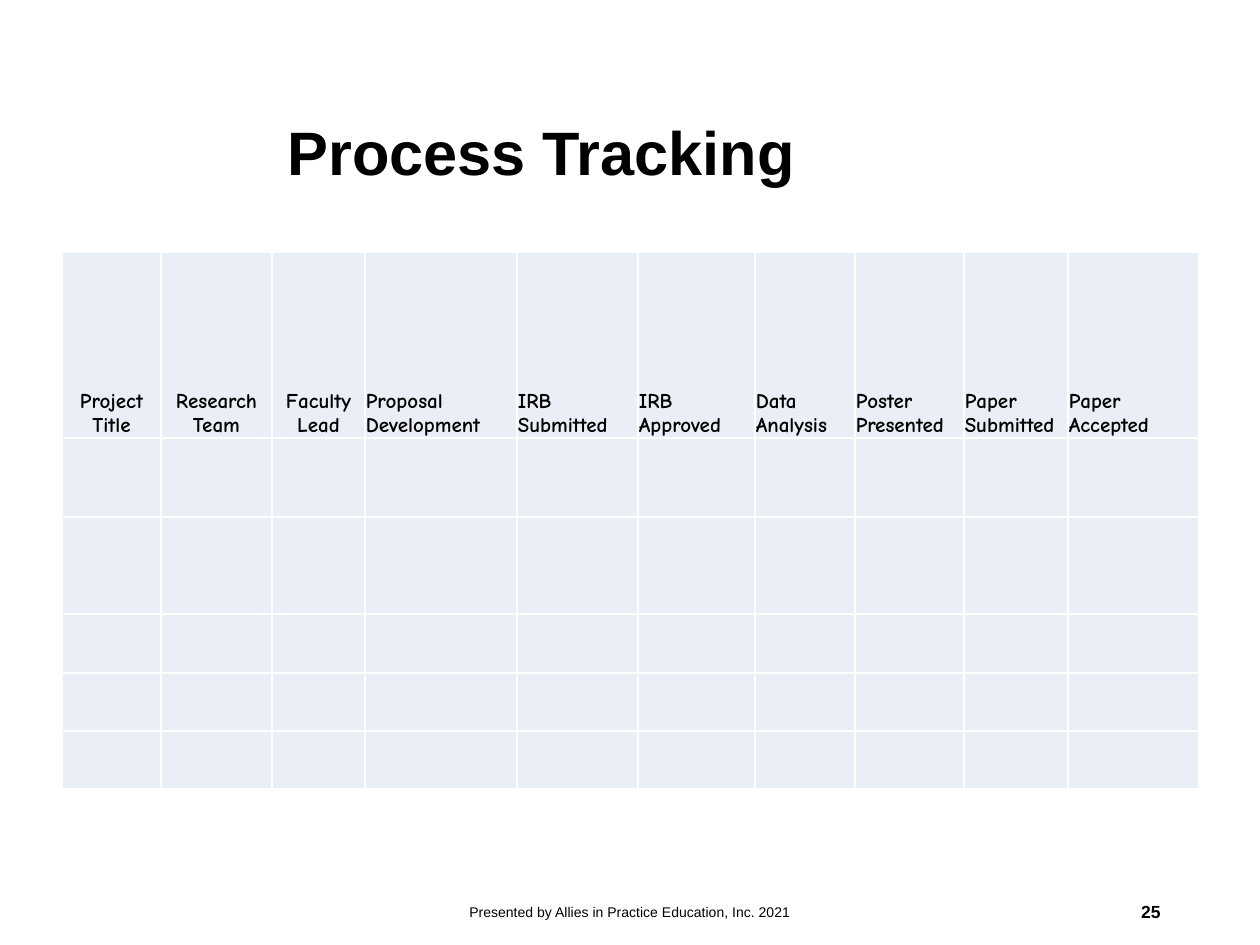
import pptx
import pptx.util
import pptx.dml.color
import pptx.enum.text
import pptx.oxml
import pptx.oxml.ns
from lxml import etree

PX = 914400 // 126
COLORS = {"text": "000000", "cell": "EAEFF7", "border": "FFFFFF"}
ALIGN = pptx.enum.text.PP_ALIGN
ANCHOR = pptx.enum.text.MSO_ANCHOR


def format_paragraph(p, font, size, bold, align):
    p.alignment = align
    p.font.name = font
    p.font.size = pptx.util.Pt(size)
    p.font.bold = bold
    p.font.color.rgb = pptx.dml.color.RGBColor.from_string(COLORS["text"])


def add_borders(cell):
    tcPr = cell._tc.get_or_add_tcPr()
    for i, side in enumerate(("lnL", "lnR", "lnT", "lnB")):
        ln = etree.Element(pptx.oxml.ns.qn("a:" + side), w="12700")
        fill = etree.SubElement(ln, pptx.oxml.ns.qn("a:solidFill"))
        etree.SubElement(fill, pptx.oxml.ns.qn("a:srgbClr"), val=COLORS["border"])
        tcPr.insert(i, ln)


prs = pptx.Presentation()
prs.slide_width = 1260 * PX
prs.slide_height = 945 * PX
s = prs.slides.add_slide(prs.slide_layouts[5])

# Title
title = s.shapes.title
title.left, title.top, title.width, title.height = [v * PX for v in (275, 64, 900, 183)]
tf = title.text_frame
tf.text = "Process Tracking"
tf.vertical_anchor = ANCHOR.MIDDLE
tf.paragraphs[0].line_spacing = 0.9
format_paragraph(tf.paragraphs[0], "Arial", 35, True, ALIGN.LEFT)

# Footer and slide number
for text, left, width, size, bold, align in (
    ("Presented by Allies in Practice Education, Inc. 2021", 417, 426, 8, False, ALIGN.CENTER),
    ("25", 890, 283, 10, True, ALIGN.RIGHT),
):
    box = s.shapes.add_textbox(left * PX, 887 * PX, width * PX, 50 * PX)
    tf = box.text_frame
    tf.word_wrap = True
    tf.vertical_anchor = ANCHOR.MIDDLE
    tf.text = text
    format_paragraph(tf.paragraphs[0], "Arial", size, bold, align)

# Tracking table
columns = [
    ("Project Title", 99), ("Research Team", 111), ("Faculty Lead", 93),
    ("Proposal Development", 152), ("IRB Submitted", 121), ("IRB Approved", 117),
    ("Data Analysis", 100), ("Poster Presented", 109), ("Paper Submitted", 104),
    ("Paper Accepted", 131),
]
row_heights = [186, 79, 97, 59, 58, 58]
table = s.shapes.add_table(
    len(row_heights), len(columns), 62 * PX, 252 * PX,
    sum(width for _, width in columns) * PX, sum(row_heights) * PX).table
for row, height in zip(table.rows, row_heights):
    row.height = height * PX
for column, (_, width) in zip(table.columns, columns):
    column.width = width * PX
for cell in table.iter_cells():
    cell.fill.solid()
    cell.fill.fore_color.rgb = pptx.dml.color.RGBColor.from_string(COLORS["cell"])
    add_borders(cell)

# Column headings: the first three are centred
for i, (heading, _) in enumerate(columns):
    cell = table.cell(0, i)
    cell.text = heading
    cell.vertical_anchor = ANCHOR.BOTTOM
    cell.margin_left = cell.margin_right = cell.margin_top = PX
    cell.margin_bottom = 0
    format_paragraph(cell.text_frame.paragraphs[0], "Comic Neue", 12, True,
                     ALIGN.CENTER if i < 3 else ALIGN.LEFT)

prs.save("out.pptx")
